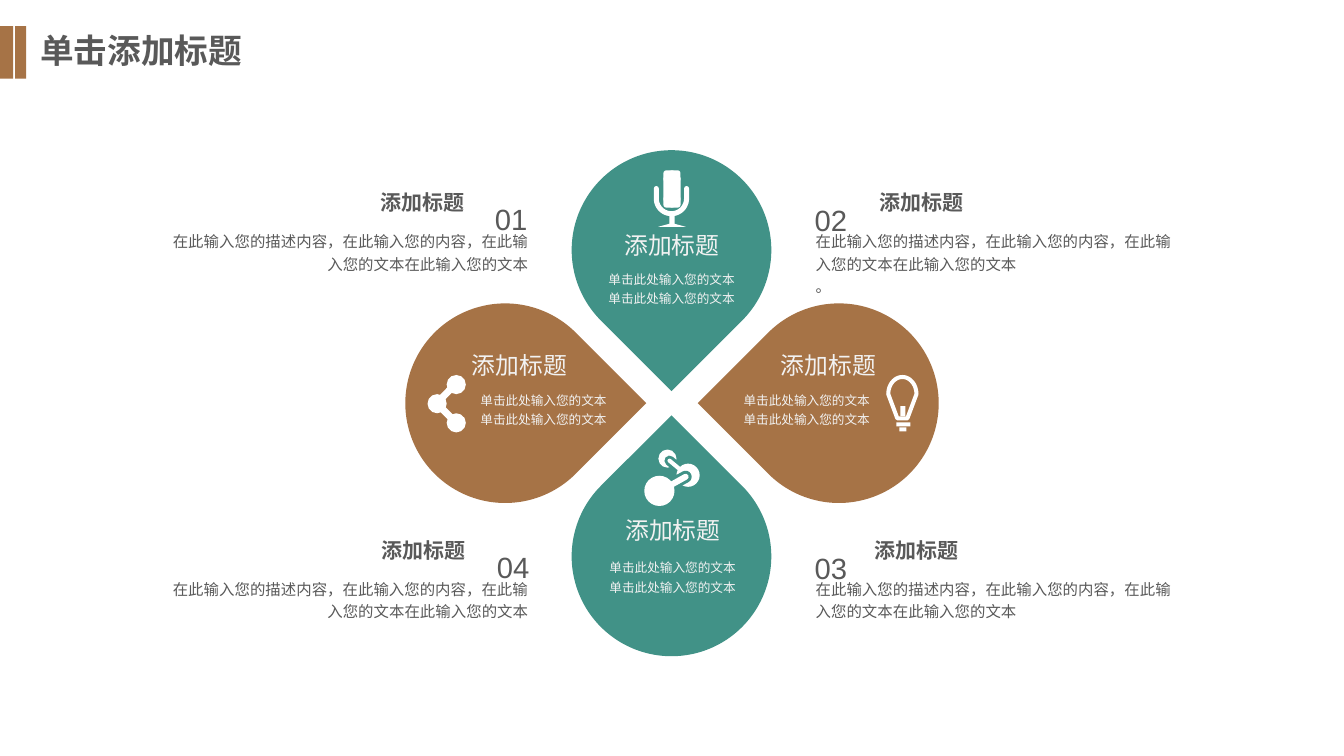
import math

import pptx
import pptx.dml.color
import pptx.enum.shapes
import pptx.enum.text
import pptx.oxml
import pptx.oxml.ns
import pptx.util

PX = 9144
NOTO, ARIAL = "Noto Sans CJK SC", "Arial"
TEAL, BROWN, GREY = "419287", "A67346", "595959"
WHITE, PALE = "FFFFFF", "F2F2F2"
KIND = pptx.enum.shapes.MSO_SHAPE
LEFT, MID, RIGHT = (getattr(pptx.enum.text.PP_ALIGN, n) for n in ("LEFT", "CENTER", "RIGHT"))
HEAD = "添加标题"
NOTE = "单击此处输入您的文本单击此处输入您的文本"
BODY = "在此输入您的描述内容，在此输入您的内容，在此输入您的文本在此输入您的文本"


def tint(part, hue):
    """Give a fill a solid colour."""
    part.solid()
    part.fore_color.rgb = pptx.dml.color.RGBColor.from_string(hue)


def shape(slide, kind, box, hue, turn=0):
    """Draw a filled preset shape without outline or shadow."""
    item = slide.shapes.add_shape(kind, *[n * PX for n in box])
    item.shadow.inherit = False
    item.rotation = turn
    tint(item.fill, hue)
    item.line.fill.background()


def pen(line, hue, wide):
    """Style a stroke with round caps."""
    tint(line.fill, hue)
    line.width = wide * PX
    line.fill._xPr.set("cap", "rnd")


def rod(slide, start, end, hue, wide):
    """Draw a thick straight line."""
    item = slide.shapes.add_connector(
        pptx.enum.shapes.MSO_CONNECTOR.STRAIGHT, *[n * PX for n in start + end])
    pen(item.line, hue, wide)
    item._element.spPr.append(pptx.oxml.parse_xml(
        "<a:effectLst %s/>" % pptx.oxml.ns.nsdecls("a")))


def outline(slide, dots, wide, close):
    """Draw a path as a white stroke, or as a white area when wide is zero."""
    pts = [(round(x * PX), round(y * PX)) for x, y in dots]
    form = slide.shapes.build_freeform(*pts[0])
    form.add_line_segments(pts[1:], close=close)
    item = form.convert_to_shape()
    item.shadow.inherit = False
    if wide:
        item.fill.background()
        pen(item.line, WHITE, wide)
    else:
        tint(item.fill, WHITE)
        item.line.fill.background()


def arc(x, y, wide, high, first, last):
    """List points along part of an ellipse, angles in degrees."""
    steps = [math.radians(first + (last - first) * i / 24) for i in range(25)]
    return [(x + wide * math.cos(t), y + high * math.sin(t)) for t in steps]


def text(slide, box, words, size, face, hue, align=LEFT, gap=None, bold=False, base=0):
    """Write one paragraph for each string in a wrapping text box."""
    frame = slide.shapes.add_textbox(*[n * PX for n in box]).text_frame
    frame.word_wrap = True
    frame.margin_left = frame.margin_right = 7 * PX
    frame.margin_top = frame.margin_bottom = 4 * PX
    for i, line in enumerate(words):
        para = frame.add_paragraph() if i else frame.paragraphs[0]
        para.alignment = align
        para.line_spacing = gap
        run = para.add_run()
        run.text = line
        font = run.font
        font.size = pptx.util.Pt(size)
        font.bold = bold
        font.name = face
        font.color.rgb = pptx.dml.color.RGBColor.from_string(hue)
        props = run._r.get_or_add_rPr()
        props.append(pptx.oxml.parse_xml(
            '<a:ea %s typeface="%s"/>' % (pptx.oxml.ns.nsdecls("a"), NOTO)))
        if base:
            props.set("baseline", str(base))


def mic(slide):
    """Draw the microphone."""
    shape(slide, KIND.ROUNDED_RECTANGLE, (658, 169, 17, 37), WHITE)
    shape(slide, KIND.OVAL, (658, 169, 17, 17), WHITE)
    shape(slide, KIND.OVAL, (658, 189, 17, 17), WHITE)
    cup = arc(666, 197, 15, 15, 180, 0)
    outline(slide, [(651, 187)] + cup + [(681, 187)], 5, False)
    shape(slide, KIND.RECTANGLE, (664, 213, 5, 10), WHITE)
    outline(slide, [(653, 225), (664, 222), (669, 222), (680, 225)], 0, True)


def bulb(slide):
    """Draw the light bulb."""
    outline(slide, arc(895, 391, 14, 17, 180, 360) + [(900, 415), (890, 415)], 4, True)
    shape(slide, KIND.RECTANGLE, (893, 403, 5, 10), WHITE)
    shape(slide, KIND.RECTANGLE, (889, 419, 14, 4), WHITE)
    shape(slide, KIND.RECTANGLE, (892, 424, 7, 4), WHITE)


def share(slide):
    """Draw three linked dots."""
    hub = (433, 400)
    for x, y in (hub, (452, 381), (452, 419)):
        shape(slide, KIND.OVAL, (x - 9, y - 9, 19, 19), WHITE)
        if (x, y) != hub:
            rod(slide, hub, (x, y), WHITE, 7)


def atoms(slide):
    """Draw the molecule with a gap around each rod."""
    shape(slide, KIND.OVAL, (653, 446, 18, 18), WHITE)
    rod(slide, (664, 457), (676, 467), TEAL, 10)
    shape(slide, KIND.OVAL, (671, 460, 23, 23), WHITE)
    rod(slide, (664, 457), (676, 467), WHITE, 4)
    rod(slide, (660, 484), (680, 473), TEAL, 12)
    shape(slide, KIND.OVAL, (639, 472, 30, 30), WHITE)
    rod(slide, (655, 487), (680, 473), WHITE, 6)


def petal(slide, spot, hue, turn, head, align, note, icon):
    """Draw a teardrop with its icon, heading and note."""
    shape(slide, KIND.TEAR, (*spot, 198, 198), hue, turn)
    icon(slide)
    text(slide, (*head, 141, 38), [HEAD], 17, NOTO, PALE, align)
    text(slide, (*note, 144, 46), [NOTE], 9, NOTO, PALE, MID, 1.3)


def block(slide, label, spot, head, top, side, words):
    """Write a number, a heading and a description."""
    left = 152 if side == RIGHT else 802
    text(slide, (head, top, 228, 34), [HEAD], 15, ARIAL, GREY, side, bold=True)
    text(slide, (left, top + 39, 379, 51), words, 11, NOTO, GREY, side, 1.2)
    text(slide, (*spot, 68, 46), [label], 36, ARIAL, GREY, side, base=-3000)


def main():
    """Build and save the slide."""
    deck = pptx.Presentation()
    deck.slide_width, deck.slide_height = 1333 * PX, 750 * PX
    slide = deck.slides.add_slide(deck.slide_layouts[6])
    text(slide, (33, 26, 330, 53), ["单击添加标题"], 24, NOTO, GREY, bold=True)
    shape(slide, KIND.RECTANGLE, (0, 26, 13, 52), BROWN)
    shape(slide, KIND.RECTANGLE, (15, 26, 11, 52), BROWN)
    block(slide, "01", (462, 173), 240, 184, RIGHT, [BODY])
    block(slide, "02", (801, 174), 865, 184, LEFT, [BODY, "。"])
    block(slide, "03", (801, 519), 860, 529, LEFT, [BODY])
    block(slide, "04", (464, 518), 241, 529, RIGHT, [BODY])
    petal(slide, (567, 149), TEAL, 135, (596, 225), MID, (594, 261), mic)
    petal(slide, (567, 453), TEAL, 315, (597, 508), MID, (595, 547), atoms)
    petal(slide, (733, 301), BROWN, 225, (735, 344), RIGHT, (728, 381), bulb)
    petal(slide, (402, 301), BROWN, 45, (461, 344), LEFT, (467, 381), share)
    deck.save("out.pptx")


if __name__ == "__main__":
    main()
